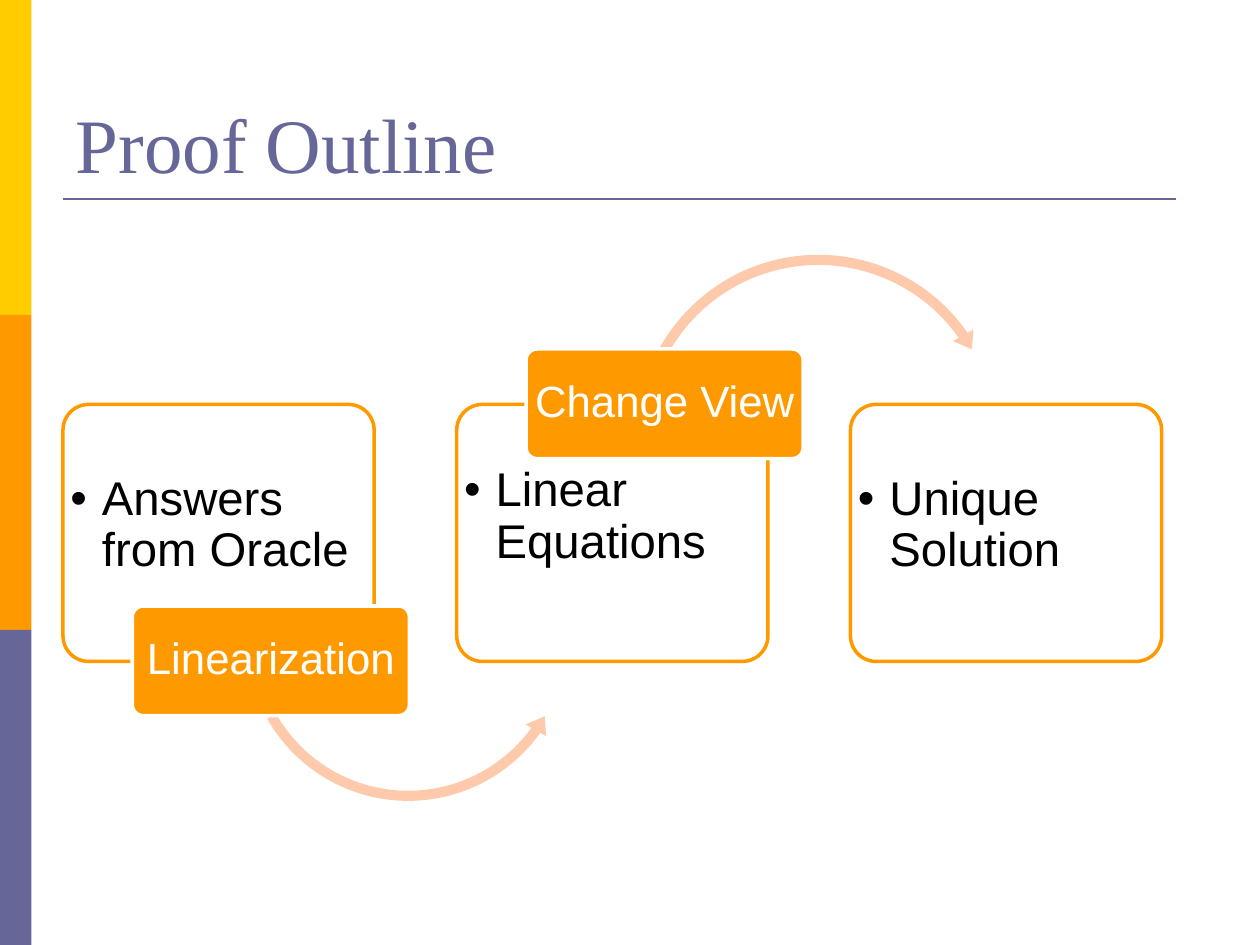
from lxml import etree
from pptx import Presentation
from pptx import util as u
from pptx.dml.color import RGBColor
from pptx.enum import shapes, text
from pptx.oxml.ns import qn

THEME = {
    "yellow": RGBColor.from_string("FFCC00"),
    "orange": RGBColor.from_string("FF9900"),
    "purple": RGBColor.from_string("666699"),
    "peach": RGBColor.from_string("FFCAAB"),
    "white": RGBColor.from_string("FFFFFF"),
    "black": RGBColor.from_string("000000"),
    "title": {"name": "Times New Roman", "size": u.Pt(44)},
    "stage": {"name": "Arial", "size": u.Pt(27)},
    "step": {"name": "Arial", "size": u.Pt(25)},
}
KIND = shapes.MSO_SHAPE

prs = Presentation()
prs.slide_width, prs.slide_height = u.Inches(10), u.Inches(7.5)
slide = prs.slides.add_slide(prs.slide_layouts[5])


def add_block(kind, box, fill, line=None, adjustments=()):
    block = slide.shapes.add_shape(kind, *map(u.Inches, box))
    block.shadow.inherit = False
    block.fill.solid()
    block.fill.fore_color.rgb = THEME[fill]
    if line:
        block.line.color.rgb = THEME[line]
        block.line.width = u.Pt(2)
    else:
        block.line.fill.background()
    for i, value in enumerate(adjustments):
        block.adjustments[i] = value
    return block


def write(shape, words, style, color, align, line_spacing, **frame_format):
    frame = shape.text_frame
    frame.text = words
    frame.word_wrap = True
    for key, value in frame_format.items():
        setattr(frame, key, value)
    paragraph = frame.paragraphs[0]
    paragraph.alignment = align
    paragraph.line_spacing = line_spacing
    for key, value in THEME[style].items():
        setattr(paragraph.runs[0].font, key, value)
    paragraph.runs[0].font.color.rgb = THEME[color]
    return paragraph


# Colour bands down the left edge
for i, band in enumerate(("yellow", "orange", "purple")):
    add_block(KIND.RECTANGLE, (0, 2.5 * i, 0.25, 2.5), band)

# Title and rule
title = slide.shapes.title
for key, value in {"left": 0.5, "top": 0.3, "width": 9, "height": 1.25}.items():
    setattr(title, key, u.Inches(value))
write(title, "Proof Outline", "title", "purple", text.PP_ALIGN.LEFT, 1.0,
      vertical_anchor=text.MSO_ANCHOR.BOTTOM)
rule = slide.shapes.add_connector(
    shapes.MSO_CONNECTOR.STRAIGHT, *map(u.Inches, (0.5, 1.58, 9.33, 1.58)))
rule.line.color.rgb = THEME["purple"]
rule.line.width = u.Pt(1.5)
etree.SubElement(rule._element.spPr, qn("a:effectLst"))

# Stages: words, top margin, step to the next stage, step top, arrow.
# Arrow: kind, left, top, size, percents (shaft, head), degrees (head, end, start)
STAGES = [
    ("Answers from Oracle", 0.5, "Linearization", 4.81,
     (KIND.LEFT_CIRCULAR_ARROW, 1.9, 3.73, 2.68, (3, 3.5), (6.06, 35.65, 150.41))),
    ("Linear Equations", 0.43, "Change View", 2.77,
     (KIND.CIRCULAR_ARROW, 5, 1.97, 2.99, (2.7, 3.1), (5.38, 325.03, 209.59))),
    ("Unique Solution", 0.5, None, None, None),
]
DEGREE = 0.6  # adjustment units in one degree

for i, (stage, top_margin, step, step_top, arrow) in enumerate(STAGES):
    left = 0.5 + 3.125 * i

    # Outlined panel with a bulleted stage
    panel = add_block(KIND.ROUNDED_RECTANGLE, (left, 3.21, 2.47, 2.04),
                      "white", "orange", [0.1])
    white = panel._element.spPr.find(qn("a:solidFill"))[0]
    etree.SubElement(white, qn("a:alpha"), val="90000")
    bullet_item = write(panel, stage, "stage", "black", text.PP_ALIGN.LEFT, 0.9,
                        vertical_anchor=text.MSO_ANCHOR.TOP,
                        margin_left=0, margin_right=0, margin_bottom=0,
                        margin_top=u.Inches(top_margin))
    properties = bullet_item._p.get_or_add_pPr()
    properties.set("marL", str(u.Inches(0.25)))
    properties.set("indent", str(u.Inches(-0.25)))
    etree.SubElement(properties, qn("a:buFont"), typeface="Arial")
    etree.SubElement(properties, qn("a:buChar"), char="•")

    if not step:
        continue

    # Curved arrow towards the next stage
    kind, arrow_left, arrow_top, size, (shaft, head), angles = arrow
    add_block(kind, (arrow_left, arrow_top, size, size), "peach", None,
              [shaft / 100, *(a * DEGREE for a in angles), head / 100])

    # Step label over the panel edge
    label = add_block(KIND.ROUNDED_RECTANGLE, (left + 0.55, step_top, 2.2, 0.87),
                      "orange", "white", [0.1])
    write(label, step, "step", "white", text.PP_ALIGN.CENTER, 0.9,
          vertical_anchor=text.MSO_ANCHOR.MIDDLE,
          margin_left=u.Inches(0.02), margin_right=u.Inches(0.02),
          margin_top=u.Inches(0.03), margin_bottom=u.Inches(0.03))

prs.save("out.pptx")
